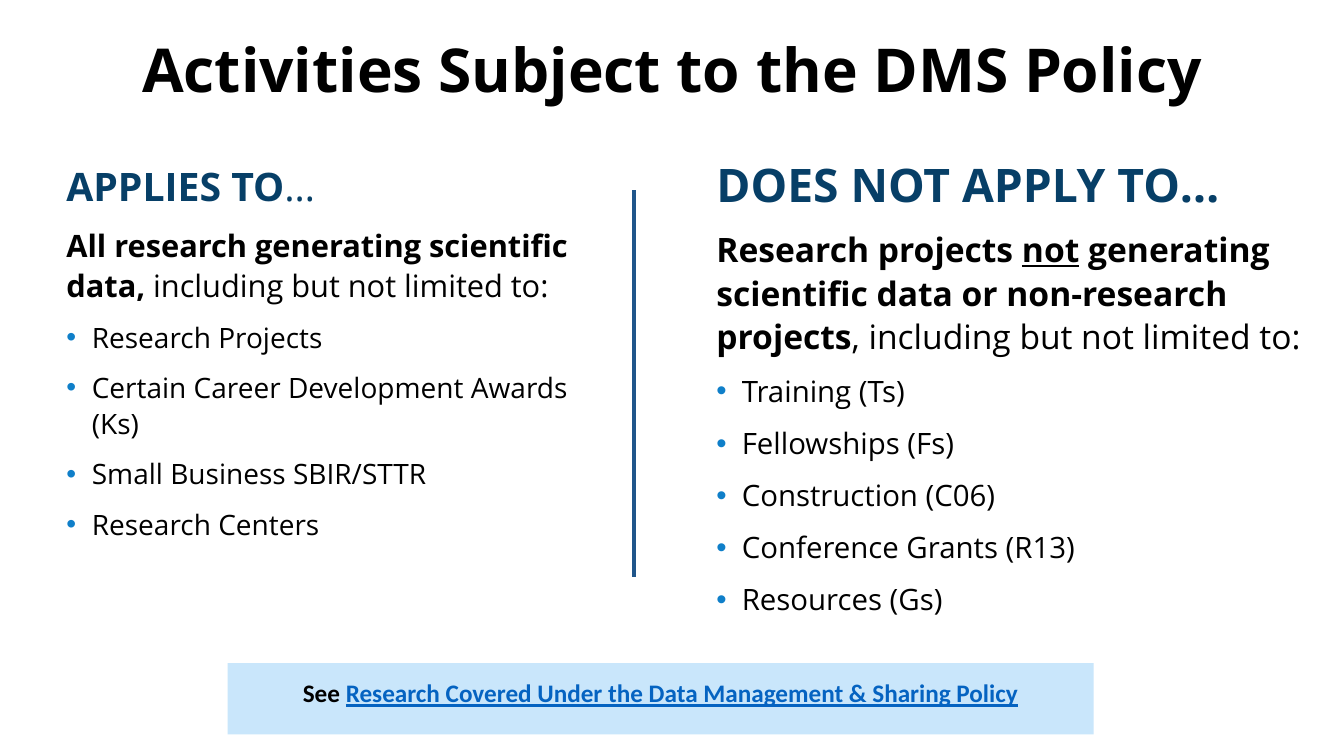
import pptx
import pptx.dml.color
import pptx.enum.shapes
import pptx.enum.text
import pptx.oxml
import pptx.oxml.ns
import pptx.util

Cm, Pt = pptx.util.Cm, pptx.util.Pt
RGB = pptx.dml.color.RGBColor
ALIGN = pptx.enum.text.PP_ALIGN
ANCHOR = pptx.enum.text.MSO_ANCHOR
COLORS = {"text": "000000", "heading": "073F67", "bullet": "0F7FC9",
          "divider": "20558A", "banner": "C9E6FB", "link": "0563C1"}
NS = pptx.oxml.ns.nsdecls("a")


def add_run(p, text, color="text", **formats):
    r = p.add_run()
    r.text = text
    r.font.color.rgb = RGB.from_string(COLORS[color])
    for name, value in formats.items():
        setattr(r.font, name, value)


def set_bullet(p, shown):
    """Give the paragraph a hanging blue bullet, or none at all."""
    pPr = p._p.get_or_add_pPr()
    indent = Cm(0.64) if shown else 0
    pPr.set("marL", str(indent))
    pPr.set("indent", str(-indent))
    if shown:
        parts = [f'<a:buClr {NS}><a:srgbClr val="{COLORS["bullet"]}"/></a:buClr>',
                 f'<a:buFont {NS} typeface="Arial"/>', f'<a:buChar {NS} char="•"/>']
    else:
        parts = [f"<a:buNone {NS}/>"]
    for part in parts:
        pPr.append(pptx.oxml.parse_xml(part))


prs = pptx.Presentation()
prs.slide_width, prs.slide_height = Cm(33.87), Cm(19.05)
s = prs.slides.add_slide(prs.slide_layouts[3])
title, applies, exempt = s.placeholders

# Placeholder positions
boxes = [(title, (2.34, 0, 29.21, 3.68), ANCHOR.MIDDLE),
         (applies, (1.42, 4.09, 14.07, 13.59), ANCHOR.TOP),
         (exempt, (17.8, 4.09, 15.49, 12.22), ANCHOR.TOP)]
for sp, place, anchor in boxes:
    sp.left, sp.top, sp.width, sp.height = map(Cm, place)
    tf = sp.text_frame
    tf.word_wrap = True
    tf.auto_size = pptx.enum.text.MSO_AUTO_SIZE.NONE
    tf.vertical_anchor = anchor

# Title
p = title.text_frame.paragraphs[0]
p.alignment, p.line_spacing = ALIGN.CENTER, 0.9
add_run(p, "Activities Subject to the DMS Policy", name="Open Sans", size=Pt(43.2), bold=True)

# Two columns: heading, lead-in and list; each run is text, bold, underline
columns = [
    (applies, (28, 22, 20), 0.9,
     [("APPLIES TO", True, False), ("…", False, False)],
     [("All research generating scientific data, ", True, False),
      ("including but not limited to:", False, False)],
     ["Research Projects", "Certain Career Development Awards (Ks)",
      "Small Business SBIR/STTR", "Research Centers"]),
    (exempt, (33, 24, 21), 0.8,
     [("DOES NOT APPLY TO…", True, False)],
     [("Research projects ", True, False), ("not", True, True),
      (" generating scientific data or non-research projects", True, False),
      (", including but not limited to:", False, False)],
     ["Training (Ts)", "Fellowships (Fs)", "Construction (C06)",
      "Conference Grants (R13)", "Resources (Gs)"]),
]
for sp, (heading_size, lead_size, item_size), heading_spacing, heading, lead, items in columns:
    tf = sp.text_frame
    rows = [(heading, heading_size, "heading"), (lead, lead_size, "text")]
    rows += [([(item, False, False)], item_size, "text") for item in items]
    for i, (runs, size, color) in enumerate(rows):
        p = tf.add_paragraph() if i else tf.paragraphs[0]
        p.line_spacing = 1.08 if i else heading_spacing
        p.space_before = Pt(10 if i else 0)
        set_bullet(p, shown=i > 1)
        for text, bold, underline in runs:
            add_run(p, text, color, name="Open Sans", size=Pt(size),
                    bold=bold, underline=underline)

# Divider
divider = s.shapes.add_connector(pptx.enum.shapes.MSO_CONNECTOR.STRAIGHT,
                                 Cm(15.98), Cm(4.8), Cm(15.98), Cm(14.55))
divider.line.color.rgb = RGB.from_string(COLORS["divider"])
divider.line.width = Pt(3)
divider._element.spPr.append(pptx.oxml.parse_xml(f"<a:effectLst {NS}/>"))

# Reference banner
banner = s.shapes.add_shape(pptx.enum.shapes.MSO_SHAPE.RECTANGLE,
                            Cm(5.74), Cm(16.71), Cm(21.82), Cm(1.8))
banner.shadow.inherit = False
banner.fill.solid()
banner.fill.fore_color.rgb = RGB.from_string(COLORS["banner"])
banner.line.fill.background()
tf = banner.text_frame
tf.word_wrap = True
tf.vertical_anchor = ANCHOR.TOP
tf.margin_top = tf.margin_bottom = Cm(0.37)
p = tf.paragraphs[0]
p.alignment = ALIGN.CENTER
banner_font = {"name": "Calibri", "size": Pt(18), "bold": True}
add_run(p, "See ", **banner_font)
add_run(p, "Research Covered Under the Data Management & Sharing Policy", "link",
        underline=True, **banner_font)

prs.save("out.pptx")
